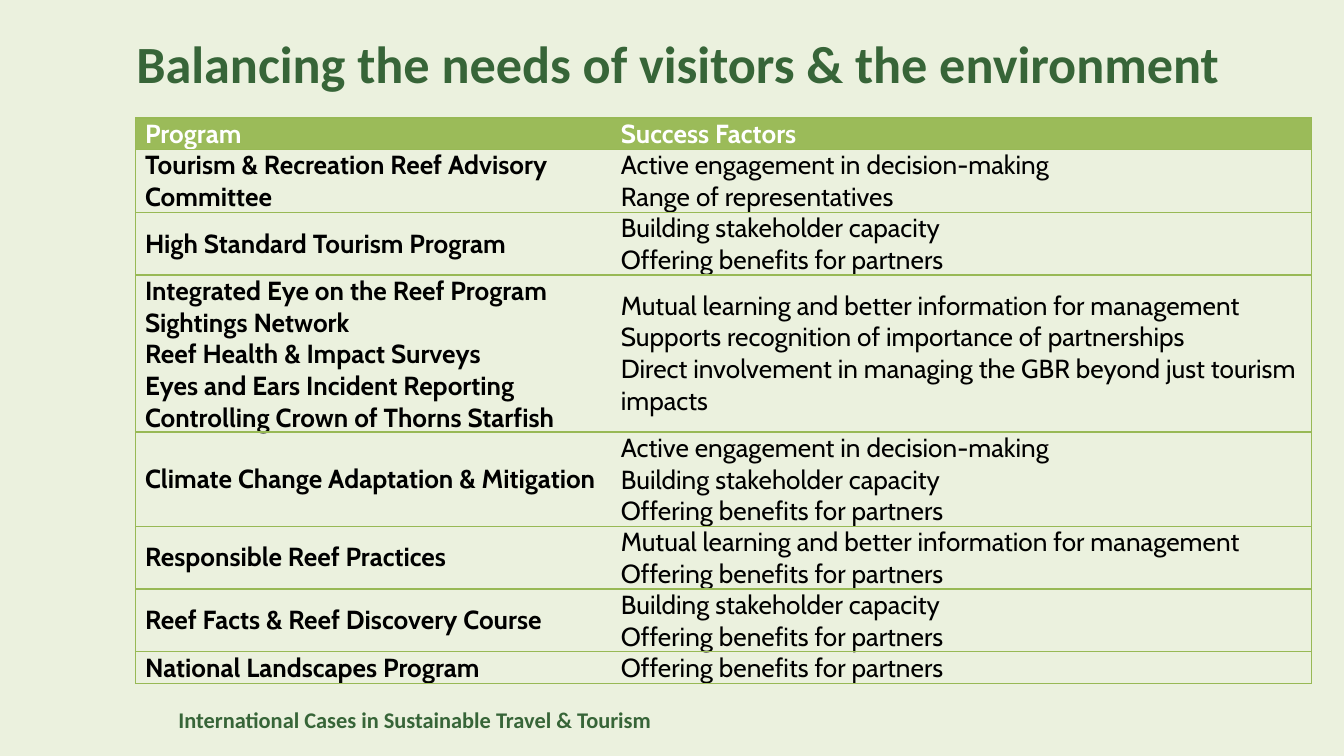
from lxml.etree import SubElement
from pptx import Presentation
from pptx.dml.color import RGBColor
from pptx.enum.text import MSO_ANCHOR
from pptx.oxml.ns import qn
from pptx.util import Pt

HUES = {"page": "EBF1DE", "title": "376538", "head": "9BBB59",
        "line": "98B955", "white": "FFFFFF", "black": "000000"}

# Table content: one string per paragraph
BUILD = "Building stakeholder capacity"
OFFER = "Offering benefits for partners"
ACTIVE = "Active engagement in decision-making"
LEARN = "Mutual learning and better information for management"

# Program lines, success factor lines, height in text lines
ROWS = [
    (["Program"], ["Success Factors"], 1),
    (["Tourism & Recreation Reef Advisory Committee"],
     [ACTIVE, "Range of representatives"], 2),
    (["High Standard Tourism Program"], [BUILD, OFFER], 2),
    (["Integrated Eye on the Reef Program", "Sightings Network",
      "Reef Health & Impact Surveys", "Eyes and Ears Incident Reporting",
      "Controlling Crown of Thorns Starfish"],
     [LEARN, "Supports recognition of importance of partnerships",
      "Direct involvement in managing the GBR beyond just tourism impacts"], 5),
    (["Climate Change Adaptation & Mitigation"], [ACTIVE, BUILD, OFFER], 3),
    (["Responsible Reef Practices"], [LEARN, OFFER], 2),
    (["Reef Facts & Reef Discovery Course"], [BUILD, OFFER], 2),
    (["National Landscapes Program"], [OFFER], 1),
]
COLS = (254.9, 375.1)
LINE = 16.8


def hue(name):
    return RGBColor.from_string(HUES[name])


def write(frame, lines, color, **form):
    """Fill a text frame, one paragraph per line."""
    for num, line in enumerate(lines):
        para = frame.add_paragraph() if num else frame.paragraphs[0]
        run = para.add_run()
        run.text = line
        for key, val in form.items():
            setattr(run.font, key, val)
        run.font.color.rgb = hue(color)


def label(slide, box, text, size, anchor):
    frame = slide.shapes.add_textbox(*map(Pt, box)).text_frame
    frame.word_wrap = True
    frame.vertical_anchor = anchor
    write(frame, [text], "title", name="Calibri", size=Pt(size), bold=True)


def edge(cell, sides):
    """Draw the given sides of a cell and clear the others."""
    props = cell._tc.get_or_add_tcPr()
    for side in "LRTB":
        line = SubElement(props, qn("a:ln" + side), w=str(Pt(0.75)))
        if side in sides:
            fill = SubElement(line, qn("a:solidFill"))
            SubElement(fill, qn("a:srgbClr"), val=HUES["line"])
        else:
            SubElement(line, qn("a:noFill"))


def fill_cell(cell, lines, head, first):
    form = {"margin_left": Pt(5), "margin_right": Pt(5),
            "margin_top": 0, "margin_bottom": 0,
            "vertical_anchor": MSO_ANCHOR.TOP if head else MSO_ANCHOR.MIDDLE}
    for key, val in form.items():
        setattr(cell, key, val)
    edge(cell, "LTB" if first else "RTB")
    if head:
        cell.fill.solid()
        cell.fill.fore_color.rgb = hue("head")
    else:
        cell.fill.background()
    write(cell.text_frame, lines, "white" if head else "black",
          name="Cabin", size=Pt(14), bold=head or first)


def grid(slide, left, top):
    high = LINE * sum(row[2] for row in ROWS)
    box = map(Pt, (left, top, sum(COLS), high))
    table = slide.shapes.add_table(len(ROWS), len(COLS), *box).table
    table.horz_banding = False
    for col, wide in zip(table.columns, COLS):
        col.width = Pt(wide)
    for num, (*texts, count) in enumerate(ROWS):
        table.rows[num].height = Pt(LINE * count)
        for pos, lines in enumerate(texts):
            fill_cell(table.cell(num, pos), lines, num == 0, pos == 0)


def main():
    deck = Presentation()
    deck.slide_width, deck.slide_height = Pt(720), Pt(405)
    slide = deck.slides.add_slide(deck.slide_layouts[6])
    slide.background.fill.solid()
    slide.background.fill.fore_color.rgb = hue("page")

    # Footer, title and table
    label(slide, (88.5, 375, 418.5, 21.6),
          "International Cases in Sustainable Travel & Tourism", 12, MSO_ANCHOR.TOP)
    label(slide, (66, 14, 630, 39),
          "Balancing the needs of visitors & the environment", 28, MSO_ANCHOR.MIDDLE)
    grid(slide, 72.7, 63.2)
    deck.save("out.pptx")


if __name__ == "__main__":
    main()
